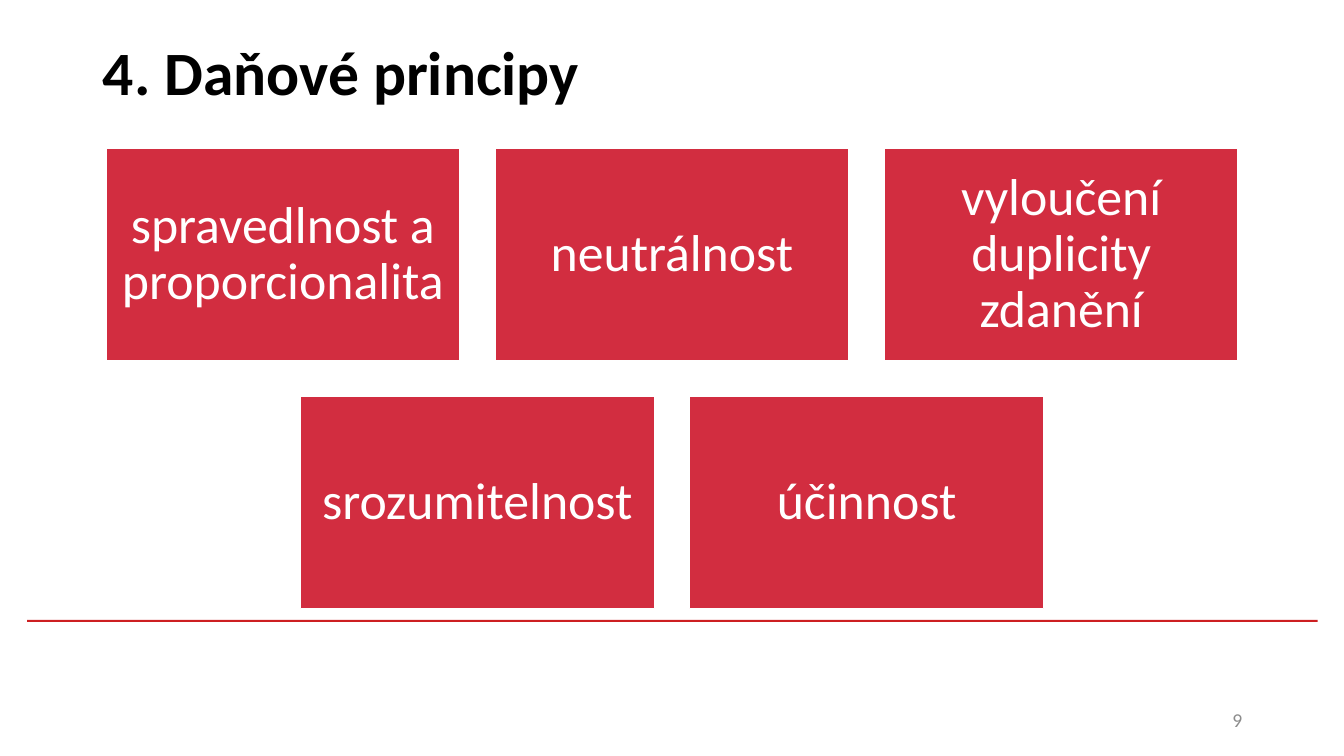
from dataclasses import dataclass

from pptx import Presentation
from pptx import util as u
from pptx.dml.color import RGBColor
from pptx.enum import shapes, text

EMU_PER_PX = 9144  # 100 px to the inch
SLIDE_WIDTH, SLIDE_HEIGHT = 1333, 750
TILE_WIDTH, TILE_HEIGHT, TILE_GAP = 351, 211, 35
TILES_TOP = 147
TILE_INSET = 15


@dataclass(frozen=True)
class Theme:
    font: str = "Calibri"
    black: str = "000000"
    white: str = "FFFFFF"
    tile: str = "D22D40"
    rule: str = "CD1F21"
    muted: str = "8C8C8C"
    title_size: int = 44
    tile_size: int = 37
    number_size: int = 14


@dataclass(frozen=True)
class Box:
    left: int
    top: int
    width: int
    height: int

    def emu(self) -> tuple[int, ...]:
        return tuple(px * EMU_PER_PX for px in (self.left, self.top, self.width, self.height))


@dataclass(frozen=True)
class Tile:
    label: str
    box: Box


THEME = Theme()
TITLE_BOX = Box(92, 2, 1150, 145)
RULE_BOX = Box(27, 615, 1280, 2)
NUMBER_BOX = Box(942, 695, 300, 40)
PRINCIPLE_ROWS = (
    ("spravedlnost a proporcionalita", "neutrálnost", "vyloučení duplicity zdanění"),
    ("srozumitelnost", "účinnost"),
)


def centred_tiles(rows: tuple[tuple[str, ...], ...]) -> list[Tile]:
    """Lay out each row of labels centred across the slide."""
    tiles = []
    for row, labels in enumerate(rows):
        row_width = len(labels) * (TILE_WIDTH + TILE_GAP) - TILE_GAP
        left = (SLIDE_WIDTH - row_width) // 2
        top = TILES_TOP + row * (TILE_HEIGHT + TILE_GAP)
        for column, label in enumerate(labels):
            tile_left = left + column * (TILE_WIDTH + TILE_GAP)
            tiles.append(Tile(label, Box(tile_left, top, TILE_WIDTH, TILE_HEIGHT)))
    return tiles


def write(shape, wording: str, size: int, color: str, align, bold: bool = False) -> None:
    frame = shape.text_frame
    frame.text = wording
    frame.word_wrap = True
    frame.auto_size = text.MSO_AUTO_SIZE.NONE
    frame.vertical_anchor = text.MSO_ANCHOR.MIDDLE
    para = frame.paragraphs[0]
    para.alignment = align
    para.line_spacing = 0.9
    for span in para.runs:
        span.font.name = THEME.font
        span.font.size = u.Pt(size)
        span.font.bold = bold
        span.font.color.rgb = RGBColor.from_string(color)


def add_rectangle(page, box: Box, color: str):
    shape = page.shapes.add_shape(shapes.MSO_SHAPE.RECTANGLE, *box.emu())
    shape.shadow.inherit = False
    shape.fill.solid()
    shape.fill.fore_color.rgb = RGBColor.from_string(color)
    shape.line.fill.background()
    return shape


def add_tile(page, tile: Tile) -> None:
    shape = add_rectangle(page, tile.box, THEME.tile)
    shape.line.color.rgb = RGBColor.from_string(THEME.white)
    shape.line.width = u.Pt(1)
    frame = shape.text_frame
    inset = TILE_INSET * EMU_PER_PX
    frame.margin_left = frame.margin_right = inset
    frame.margin_top = frame.margin_bottom = inset
    write(shape, tile.label, THEME.tile_size, THEME.white, text.PP_ALIGN.CENTER)


def main() -> None:
    deck = Presentation()
    deck.slide_width = SLIDE_WIDTH * EMU_PER_PX
    deck.slide_height = SLIDE_HEIGHT * EMU_PER_PX
    page = deck.slides.add_slide(deck.slide_layouts.get_by_name("Title Only"))

    add_rectangle(page, RULE_BOX, THEME.rule)
    title = page.shapes.title
    title.left, title.top, title.width, title.height = TITLE_BOX.emu()
    write(title, "4. Daňové principy", THEME.title_size, THEME.black,
          text.PP_ALIGN.LEFT, bold=True)

    for tile in centred_tiles(PRINCIPLE_ROWS):
        add_tile(page, tile)

    number = page.shapes.add_textbox(*NUMBER_BOX.emu())
    write(number, "9", THEME.number_size, THEME.muted, text.PP_ALIGN.RIGHT)
    deck.save("out.pptx")


if __name__ == "__main__":
    main()
